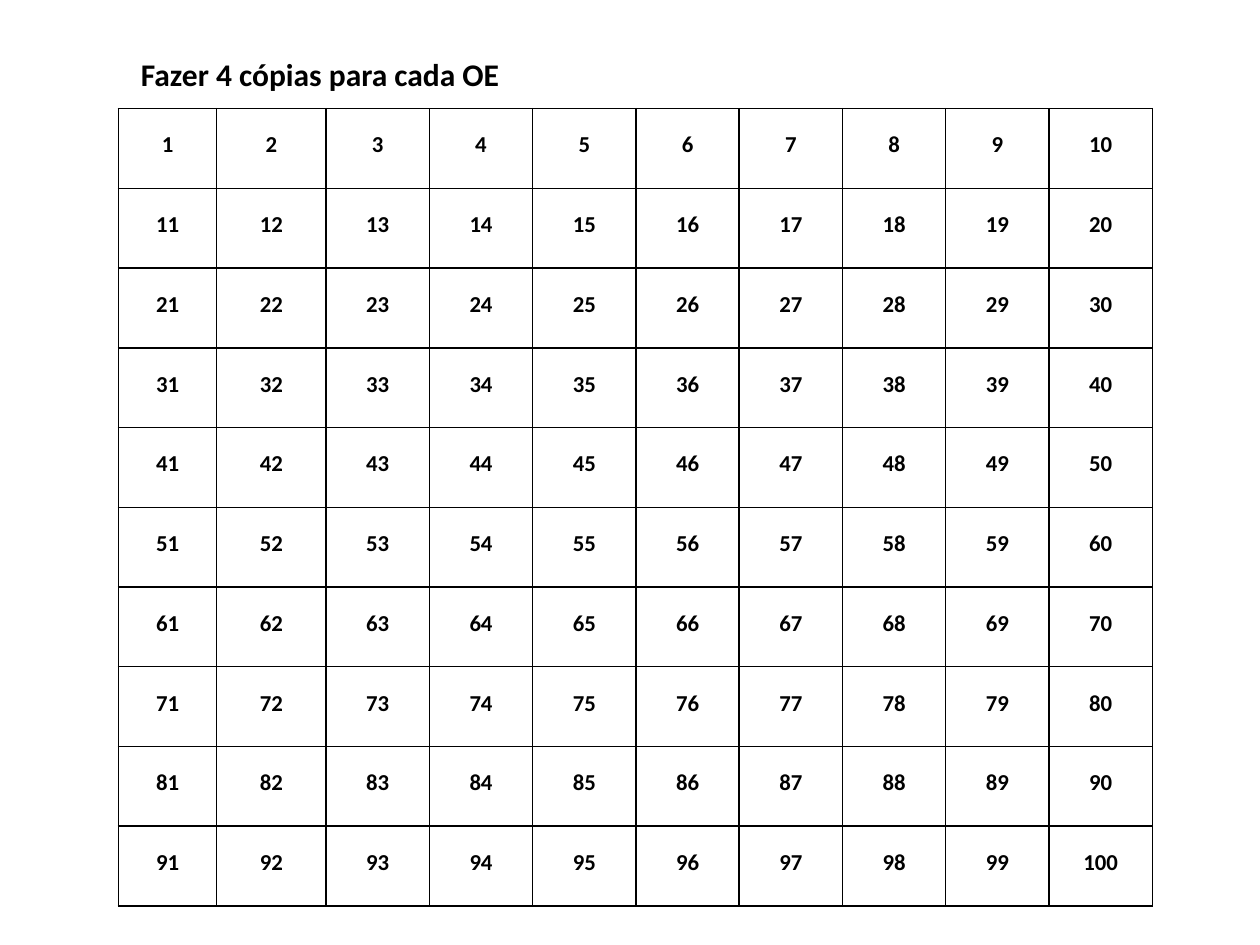
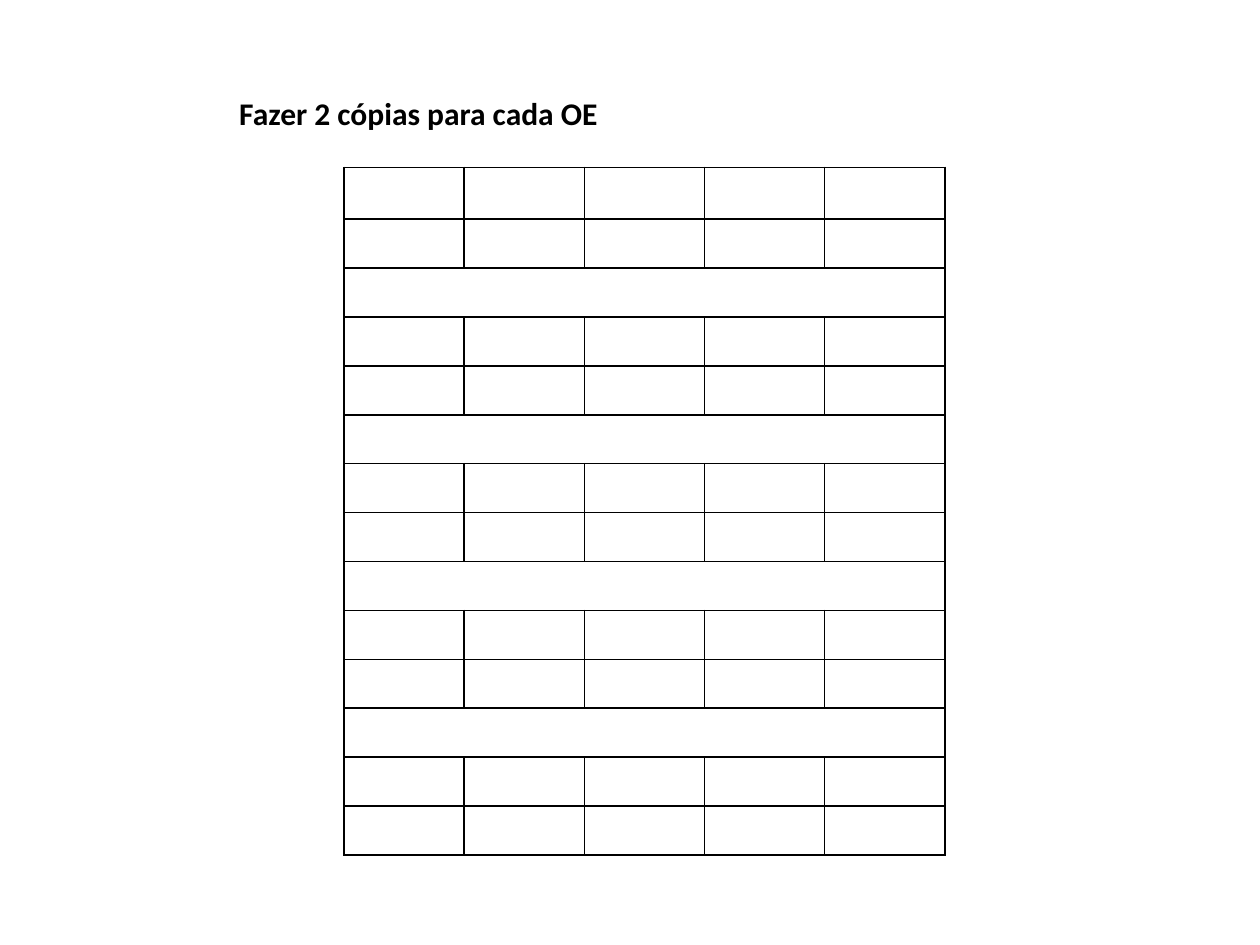
from dataclasses import dataclass

from lxml import etree
from pptx import Presentation, util as u
from pptx.dml.color import RGBColor
from pptx.enum import text
from pptx.oxml import ns


@dataclass(frozen=True)
class Theme:
    font: str = "Calibri"
    ink: str = "000000"
    title_size: float = 18
    number_size: float = 13
    border: float = 1


theme = Theme()
presentation = Presentation()
presentation.slide_width = u.Inches(10)
presentation.slide_height = u.Inches(7.5)
WIDTH, HEIGHT = presentation.slide_width, presentation.slide_height


def write(frame, words, size, alignment):
    paragraph = frame.paragraphs[0]
    paragraph.text = words
    paragraph.alignment = alignment
    paragraph.font.name = theme.font
    paragraph.font.size = u.Pt(size)
    paragraph.font.bold = True
    paragraph.font.color.rgb = RGBColor.from_string(theme.ink)


def add_grid(slide, left, top, column_widths, row_heights):
    shape = slide.shapes.add_table(
        len(row_heights), len(column_widths), left, top,
        sum(column_widths), sum(row_heights))
    table = shape.table
    table.first_row = table.horz_banding = False
    for column, width in zip(table.columns, column_widths):
        column.width = width
    for row, height in zip(table.rows, row_heights):
        row.height = height
    for cell in table.iter_cells():
        cell.margin_left = cell.margin_right = u.Inches(0.06)
        cell.margin_top = cell.margin_bottom = 0
        cell.fill.background()
        properties = cell._tc.get_or_add_tcPr()
        for position, side in enumerate(("lnL", "lnR", "lnT", "lnB")):
            line = etree.Element(ns.qn(f"a:{side}"), w=str(u.Pt(theme.border)))
            fill = etree.SubElement(line, ns.qn("a:solidFill"))
            etree.SubElement(fill, ns.qn("a:srgbClr"), val=theme.ink)
            properties.insert(position, line)
    return table


blank = presentation.slide_layouts[6]
number_slide = presentation.slides.add_slide(blank)
blank_slide = presentation.slides.add_slide(blank)

column = int(WIDTH * 0.082)
row = int(HEIGHT * 0.844 / 10)
numbers = add_grid(
    number_slide, int(WIDTH * 0.094), int(HEIGHT * 0.115),
    [int(column * 0.95), int(column * 1.06)] + [column] * 8, [row] * 10)
for number, cell in enumerate(numbers.iter_cells(), start=1):
    cell.margin_top = u.Inches(0.18)
    write(cell.text_frame, str(number), theme.number_size, text.PP_ALIGN.CENTER)

column = int(WIDTH * 0.477 / 5)
row = int(HEIGHT * 0.728 / 14.06)
pairs = add_grid(
    blank_slide, int(WIDTH * 0.273), int(HEIGHT * 0.177),
    [column] * 5, [int(row * 1.06)] + [row] * 13)
for divider in range(2, 14, 3):
    pairs.cell(divider, 0).merge(pairs.cell(divider, 4))

for slide, copies, left, top, width, wrap in (
    (number_slide, 4, 0.102, 0.052, 0.313, False),
    (blank_slide, 2, 0.18, 0.093, 0.359, True),
):
    title = slide.shapes.add_textbox(
        int(WIDTH * left), int(HEIGHT * top), int(WIDTH * width), int(HEIGHT * 0.054))
    title.text_frame.word_wrap = wrap
    title.text_frame.auto_size = text.MSO_AUTO_SIZE.SHAPE_TO_FIT_TEXT
    write(title.text_frame, f"Fazer {copies} cópias para cada OE",
          theme.title_size, text.PP_ALIGN.LEFT)

presentation.save("out.pptx")
